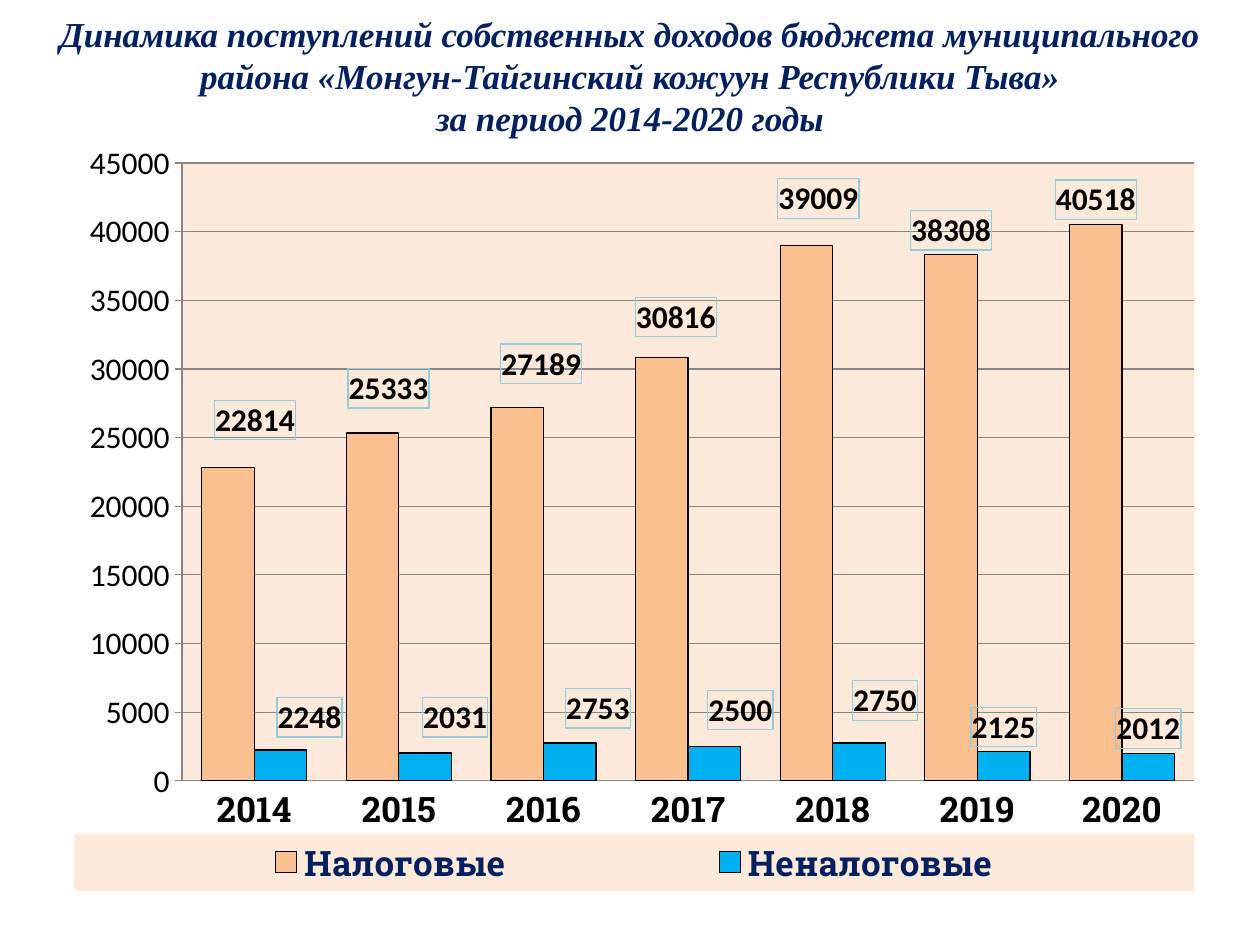
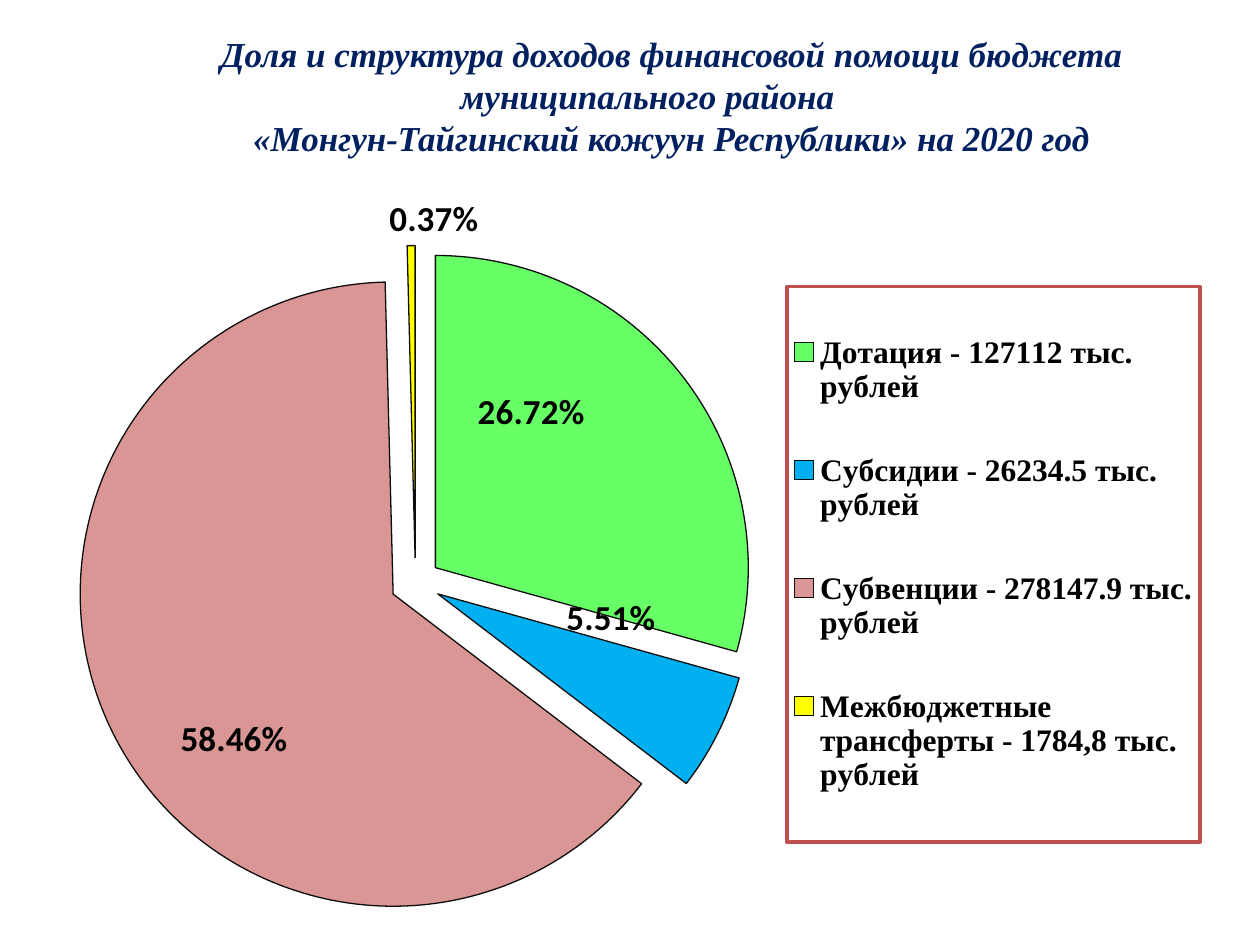
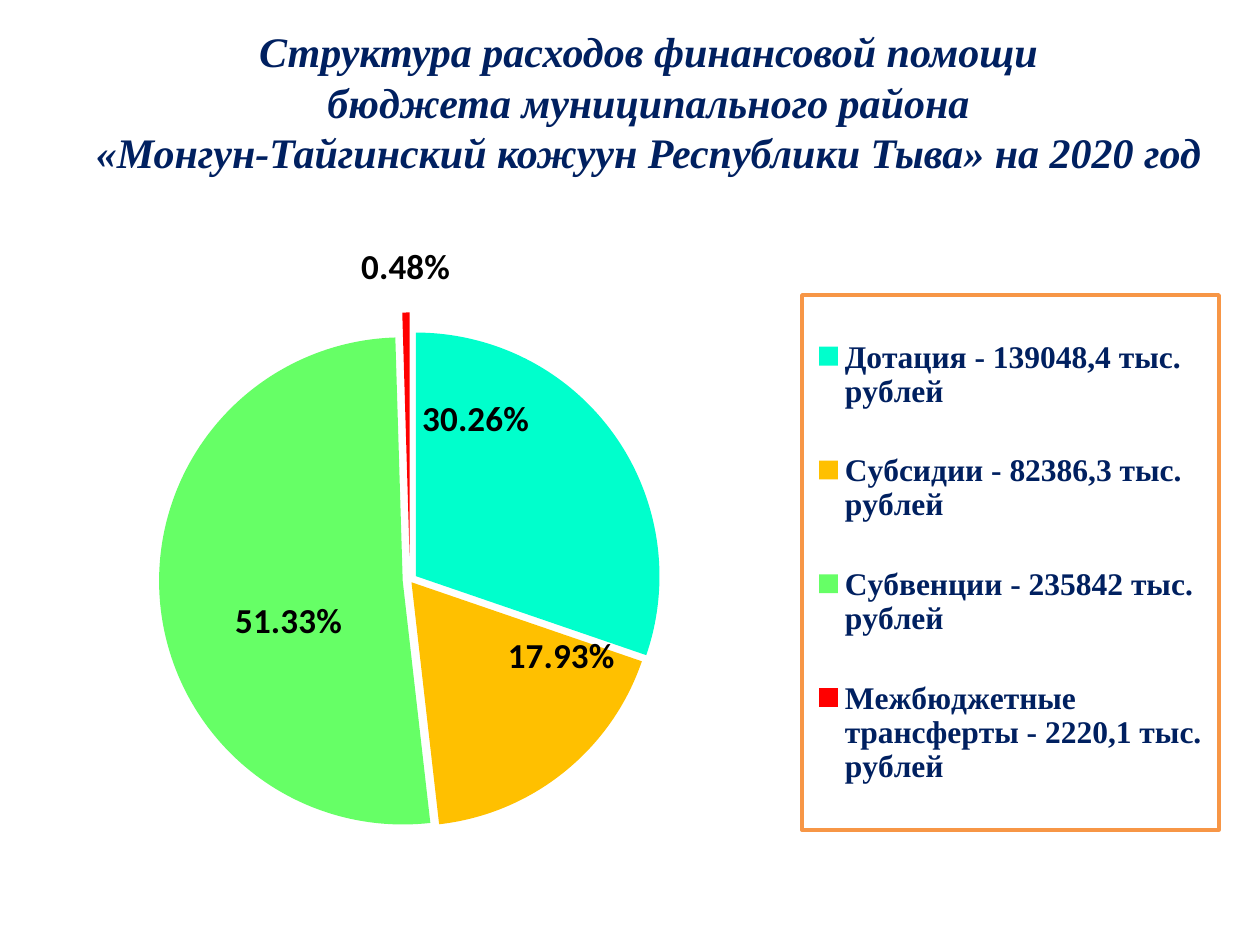
"""Build three budget slides: one column chart and two exploded pies."""
from dataclasses import dataclass

from pptx import Presentation
from pptx.chart.data import CategoryChartData
from pptx.dml.color import RGBColor
from pptx.enum.chart import XL_CHART_TYPE, XL_LABEL_POSITION, XL_LEGEND_POSITION, XL_TICK_MARK
from pptx.enum.text import MSO_ANCHOR, MSO_AUTO_SIZE, PP_ALIGN
from pptx.oxml import parse_xml
from pptx.oxml.ns import nsdecls, qn
from pptx.util import Emu, Pt

PX_PER_INCH = 126


@dataclass(frozen=True)
class Theme:
    """Colours, fonts and type sizes shared by the slides."""
    navy: str = "002060"
    black: str = "000000"
    outline: str = "0D0D0D"
    grid: str = "868686"
    peach: str = "FDEADA"
    orange: str = "FAC090"
    blue: str = "00B0F0"
    label_border: str = "93CDDD"
    green: str = "66FF66"
    rose: str = "D99694"
    yellow: str = "FFFF00"
    aqua: str = "00FFCC"
    amber: str = "FFC000"
    red: str = "FF0000"
    brick_border: str = "C0504D"
    orange_border: str = "F79646"
    title_font: str = "Times New Roman"
    chart_font: str = "Calibri"
    slab_font: str = "Roboto Slab"
    text_size: int = 18
    large_size: int = 20
    title_size: int = 24
    thin: float = 0.75
    thick: float = 2


THEME = Theme()


def px(length):
    """Turn pixels into EMU."""
    return Emu(round(length * 914400 / PX_PER_INCH))


def set_font(font, size, color=THEME.black, name=THEME.chart_font, bold=False, italic=False):
    """Apply a full set of font properties."""
    font.size, font.name, font.bold, font.italic = Pt(size), name, bold, italic
    font.color.rgb = RGBColor.from_string(color)


def set_fill(fill, color):
    """Make a fill solid."""
    fill.solid()
    fill.fore_color.rgb = RGBColor.from_string(color)


def set_line(line, color, width=THEME.thin):
    """Draw a line, or none when no colour is given."""
    if color is None:
        line.fill.background()
        return
    set_fill(line.fill, color)
    line.width = Pt(width)


def add_title(slide, frame, lines, size, indent=0, wrap=True, anchor=MSO_ANCHOR.TOP):
    """Add a centred italic title, one paragraph a line."""
    box = slide.shapes.add_textbox(*map(px, frame))
    text = box.text_frame
    text.word_wrap = wrap
    text.auto_size = MSO_AUTO_SIZE.SHAPE_TO_FIT_TEXT
    text.vertical_anchor = anchor
    for number, line in enumerate(lines):
        para = text.paragraphs[0] if number == 0 else text.add_paragraph()
        para.alignment = PP_ALIGN.CENTER
        para._p.get_or_add_pPr().set("indent", str(px(indent)))
        span = para.add_run()
        span.text = line
        set_font(span.font, size, THEME.navy, THEME.title_font, True, True)


def layout_xml(fields):
    """Make a manual layout from pairs of tag and value."""
    body = "".join(f'<c:{tag} val="{value}"/>' for tag, value in fields)
    return parse_xml(f'<c:layout {nsdecls("c")}><c:manualLayout>{body}</c:manualLayout></c:layout>')


def area_layout(frame, area, inner=False):
    """Express a slide area as fractions of a chart frame."""
    left, top, width, height = frame
    fields = [("layoutTarget", "inner")] if inner else []
    fields += [("xMode", "edge"), ("yMode", "edge"),
               ("x", (area[0] - left) / width), ("y", (area[1] - top) / height),
               ("w", area[2] / width), ("h", area[3] / height)]
    return layout_xml(fields)


def box_style(fill=None, border=None, width=THEME.thin):
    """Make the fill and border of a chart part."""
    def paint(color):
        """Make a solid fill or none."""
        return f'<a:solidFill><a:srgbClr val="{color}"/></a:solidFill>' if color else "<a:noFill/>"
    return parse_xml(f'<c:spPr {nsdecls("c", "a")}>{paint(fill)}'
                     f'<a:ln w="{Pt(width)}">{paint(border)}</a:ln></c:spPr>')


def add_chart(slide, kind, frame, plot_area, data):
    """Add a chart with a fixed plot area and return it."""
    chart = slide.shapes.add_chart(kind, *map(px, frame), data).chart
    chart.has_title = False
    set_font(chart.font, THEME.text_size)
    area = chart.element.find(".//" + qn("c:plotArea"))
    for old in area.findall(qn("c:layout")):
        area.remove(old)
    area.insert(0, area_layout(frame, plot_area, inner=True))
    return chart


def add_legend(chart, frame, area, position, style, **font):
    """Add a legend at a fixed place."""
    chart.has_legend = True
    legend = chart.legend
    legend.position = position
    legend.include_in_layout = False
    set_font(legend.font, bold=True, **font)
    element = legend._element
    element.find(qn("c:legendPos")).addnext(area_layout(frame, area))
    element.find(qn("c:txPr")).addprevious(style)


def add_labels(series, frame, position, size, offsets, border=None, number_format="General"):
    """Show values and move the first labels by pixel offsets."""
    labels = series.data_labels
    labels.show_value = True
    labels.number_format = number_format
    labels.number_format_is_linked = False
    labels.position = position
    set_font(labels.font, size, bold=True)
    for index in range(len(offsets)):
        label = series.points[index].data_label
        set_font(label.font, size, bold=True)
        label.position = position
    group = labels._element
    points = group.findall(qn("c:dLbl"))
    for point, (right, down) in zip(points, offsets):
        point.find(qn("c:idx")).addnext(layout_xml([("x", right / frame[2]), ("y", down / frame[3])]))
    for part in [group, *points]:
        part.find(qn("c:txPr")).addprevious(box_style(border=border))
    for leader in group.findall(qn("c:showLeaderLines")):
        leader.set("val", "0")


def add_income_columns(slide):
    """Add the columns of own income by year."""
    frame = (74, 135, 1121, 760)
    data = CategoryChartData()
    data.categories = [str(year) for year in range(2014, 2021)]
    data.add_series("Налоговые", (22814, 25333, 27189, 30816, 39009, 38308, 40518))
    data.add_series("Неналоговые", (2248, 2031, 2753, 2500, 2750, 2125, 2012))
    chart = add_chart(slide, XL_CHART_TYPE.COLUMN_CLUSTERED, frame, (182, 163, 1013, 618), data)
    chart.element.find(".//" + qn("c:plotArea")).append(box_style(THEME.peach))
    plot = chart.plots[0]
    plot.gap_width, plot.overlap, plot.vary_by_categories = 75, 0, False
    years, amounts = chart.category_axis, chart.value_axis
    years.major_tick_mark = XL_TICK_MARK.NONE
    set_font(years.tick_labels.font, THEME.large_size, name=THEME.slab_font, bold=True)
    amounts.minimum_scale, amounts.maximum_scale, amounts.major_unit = 0, 45000, 5000
    amounts.major_tick_mark = XL_TICK_MARK.CROSS
    set_font(amounts.tick_labels.font, THEME.text_size)
    for part in (years, amounts, amounts.major_gridlines):
        set_line(part.format.line, THEME.grid)
    label_offsets = (
        ((27, -23), (16, -20), (24, -19), (14, -16), (12, -22)),
        ((29, -8), (30, -11), (28, -10), (26, -12), (26, -18)),
    )
    for series, color, offsets in zip(plot.series, (THEME.orange, THEME.blue), label_offsets):
        set_fill(series.format.fill, color)
        set_line(series.format.line, THEME.black)
        add_labels(series, frame, XL_LABEL_POSITION.OUTSIDE_END, THEME.text_size, offsets,
                   THEME.label_border)
    add_legend(chart, frame, (74, 834, 1121, 57), XL_LEGEND_POSITION.BOTTOM, box_style(THEME.peach),
               size=THEME.large_size, color=THEME.navy, name=THEME.slab_font)


def explosion_xml(percent):
    """Make the distance of a slice from the centre."""
    return parse_xml(f'<c:explosion {nsdecls("c")} val="{percent}"/>')


def add_aid_pie(slide, frame, plot_area, slices, explosion, line, legend_area, legend_border,
                legend_color):
    """Add a pie from rows of name, share, colour, explosion and label offset."""
    names, shares, colors, distances, offsets = zip(*slices)
    data = CategoryChartData(number_format="0.00%")
    data.categories = names
    data.add_series("Series 1", shares)
    chart = add_chart(slide, XL_CHART_TYPE.PIE, frame, plot_area, data)
    chart.plots[0].vary_by_categories = True
    series = chart.plots[0].series[0]
    for index, color in enumerate(colors):
        point = series.points[index]
        set_fill(point.format.fill, color)
        set_line(point.format.line, line)
    element = series._element
    for point, distance in zip(element.findall(qn("c:dPt")), distances):
        point.find(qn("c:spPr")).addprevious(explosion_xml(distance))
    element.find(qn("c:dPt")).addprevious(explosion_xml(explosion))
    add_labels(series, frame, XL_LABEL_POSITION.BEST_FIT, THEME.large_size, offsets,
               number_format="0.00%")
    add_legend(chart, frame, legend_area, XL_LEGEND_POSITION.RIGHT,
               box_style(border=legend_border, width=THEME.thick),
               size=THEME.text_size, color=legend_color, name=THEME.title_font)


def main():
    """Build and save the deck."""
    deck = Presentation()
    deck.slide_width, deck.slide_height = px(1260), px(945)
    income, aid, spending = [deck.slides.add_slide(deck.slide_layouts[6]) for _ in range(3)]

    add_income_columns(income)
    add_title(income, (0, 6, 1260, 144), (
        "Динамика поступлений собственных доходов бюджета муниципального района "
        "«Монгун-Тайгинский кожуун Республики Тыва»",
        "за период 2014-2020 годы"), THEME.large_size)

    add_aid_pie(aid, (0, 195, 1260, 725), (1, 244, 829, 676), (
        ("Дотация - 127112 тыс. рублей", 0.2672, THEME.green, 8, (-213, 59)),
        ("Субсидии - 26234.5 тыс. рублей", 0.0551, THEME.blue, 8, (-158, -140)),
        ("Субвенции - 278147.9 тыс. рублей", 0.5846, THEME.rose, 8, (180, -22)),
        ("Межбюджетные трансферты - 1784,8 тыс. рублей", 0.0037, THEME.yellow, 8, (23, 2)),
    ), 8, THEME.outline, (787, 285, 413, 557), THEME.brick_border, THEME.black)
    add_title(aid, (35, 26, 1225, 140), (
        "Доля и структура доходов финансовой помощи бюджета муниципального района",
        "«Монгун-Тайгинский кожуун Республики» на 2020 год"), THEME.large_size, indent=48)

    add_aid_pie(spending, (0, 214, 1260, 674), (54, 276, 712, 609), (
        ("Дотация - 139048,4 тыс. рублей", 0.3026, THEME.aqua, 3, (-198, 10)),
        ("Субсидии - 82386,3 тыс. рублей", 0.1793, THEME.amber, 1, (-61, -144)),
        ("Субвенции - 235842 тыс. рублей", 0.5133, THEME.green, 3, (190, 22)),
        ("Межбюджетные трансферты - 2220,1 тыс. рублей", 0.0048, THEME.red, 10, (0, -16)),
    ), 25, None, (802, 295, 417, 535), THEME.orange_border, THEME.navy)
    add_title(spending, (19, 19, 1211, 165), (
        "Структура расходов финансовой помощи",
        "бюджета муниципального района",
        "«Монгун-Тайгинский кожуун Республики Тыва» на 2020 год"),
        THEME.title_size, indent=48, wrap=False, anchor=MSO_ANCHOR.MIDDLE)

    deck.save("out.pptx")


if __name__ == "__main__":
    main()
